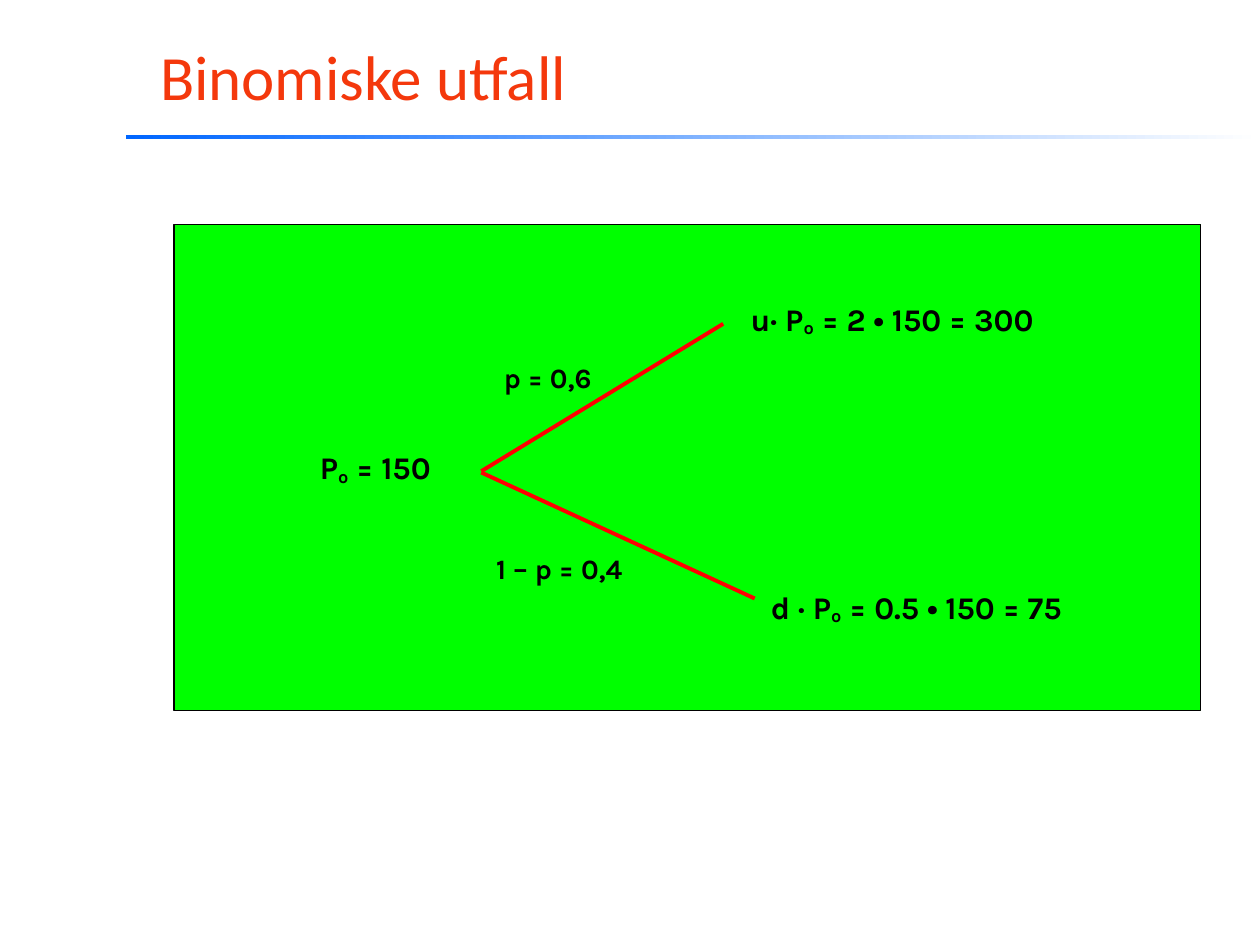
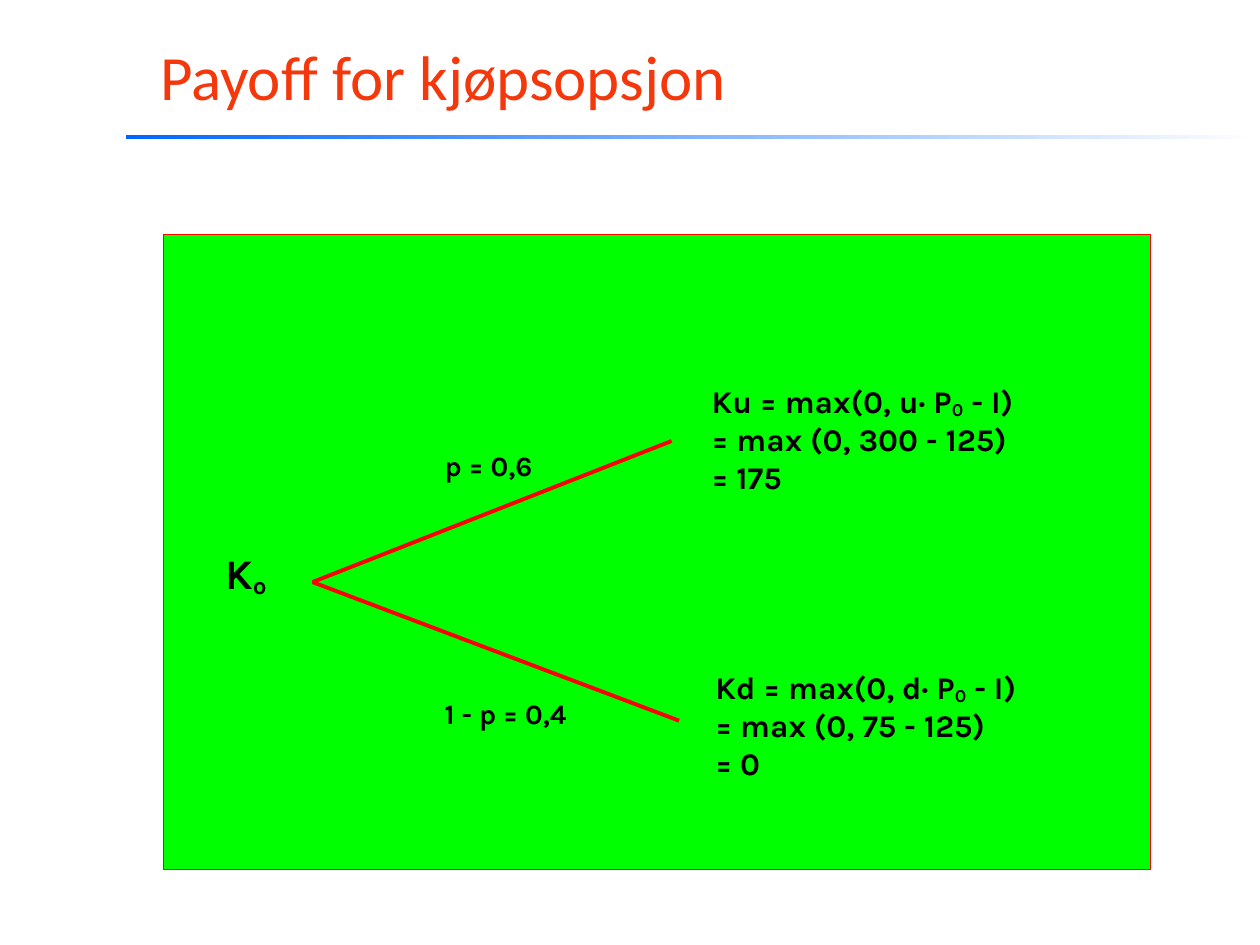
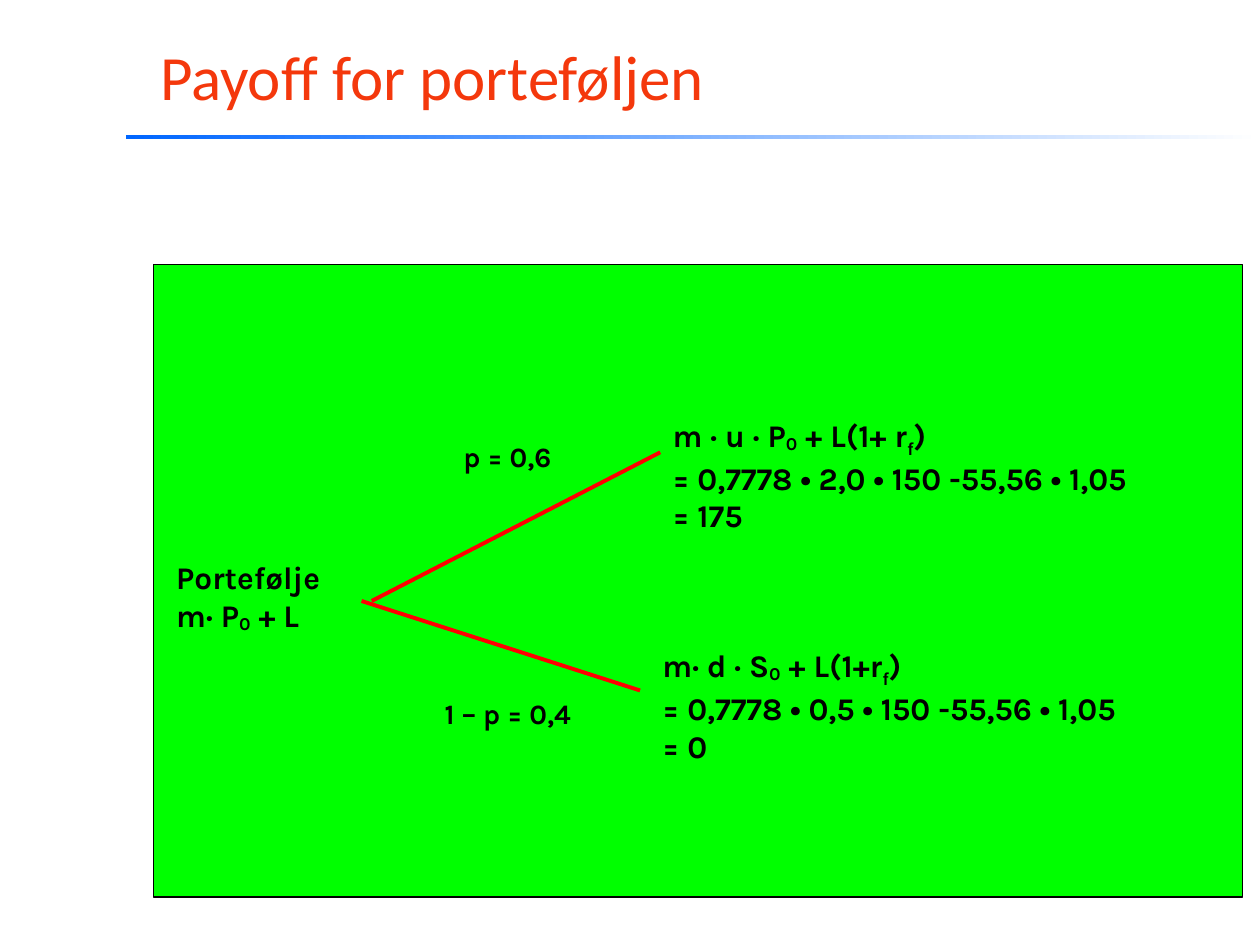
from lxml import etree
from pptx import Presentation
from pptx.dml.color import RGBColor
from pptx.enum.shapes import MSO_CONNECTOR, MSO_SHAPE
from pptx.enum.text import MSO_ANCHOR, MSO_AUTO_SIZE, PP_ALIGN
from pptx.oxml.ns import qn
from pptx.util import Inches, Pt

RECT = MSO_SHAPE.RECTANGLE
LINE = MSO_CONNECTOR.STRAIGHT
LEFT = PP_ALIGN.LEFT
MIDDLE = MSO_ANCHOR.MIDDLE
FIT = MSO_AUTO_SIZE.SHAPE_TO_FIT_TEXT
FIXED = MSO_AUTO_SIZE.NONE

ORANGE = RGBColor(0xF4, 0x38, 0x0C)
BLUE = RGBColor(0x00, 0x66, 0xFF)
WHITE = RGBColor(0xFF, 0xFF, 0xFF)
GREEN = RGBColor(0x00, 0xFF, 0x00)
RED = RGBColor(0xFF, 0x00, 0x00)
BLACK = RGBColor(0x00, 0x00, 0x00)

LOW = -10000
DEEP = -25000
CHANCE = "p = 0,6"


def write(frame, *parts, size=18, font="Karla", color=BLACK, bold=True):
    para = frame.paragraphs[0]
    para.alignment = LEFT
    for part in parts:
        text, base = (part, 0) if isinstance(part, str) else part
        for num, line in enumerate(text.split("\n")):
            if num:
                para.add_line_break()
            run = para.add_run()
            run.text = line
            run.font.size = Pt(size)
            run.font.name = font
            run.font.bold = bold
            run.font.color.rgb = color
            if base:
                run.font._element.set("baseline", str(base))


def add_label(slide, box, spot, width, *parts, size=18):
    text = "".join(part if isinstance(part, str) else part[0] for part in parts)
    high = 0.1 + (text.count("\n") + 1) * size / 60
    label = slide.shapes.add_textbox(
        Inches(box[0] + spot[0]), Inches(box[1] + spot[1]),
        Inches(width), Inches(high))
    frame = label.text_frame
    frame.word_wrap = False
    frame.auto_size = FIT
    write(frame, *parts, size=size)


def add_branch(slide, box, start, end):
    branch = slide.shapes.add_connector(
        LINE, Inches(box[0] + start[0]), Inches(box[1] + start[1]),
        Inches(box[0] + end[0]), Inches(box[1] + end[1]))
    branch.line.color.rgb = RED
    branch.line.width = Pt(2.25)
    etree.SubElement(branch.element.spPr, qn("a:effectLst"))


def add_panel(slide, box, edge):
    panel = slide.shapes.add_shape(RECT, *map(Inches, box))
    panel.shadow.inherit = False
    panel.fill.solid()
    panel.fill.fore_color.rgb = GREEN
    panel.line.color.rgb = edge
    panel.line.width = Pt(0.75)


def add_tree(slide, box, root, labels, lines, odds, edge=BLACK):
    add_panel(slide, box, edge)
    for start, end in lines:
        add_branch(slide, box, start, end)
    for spot, width, *parts in labels:
        add_label(slide, box, spot, width, *parts)
    spot, width, size, *parts = root
    add_label(slide, box, spot, width, *parts, size=size)
    for spot, width, text in odds:
        add_label(slide, box, spot, width, text, size=16)


def style_layout(deck, layout):
    head = layout.placeholders[0]
    head.left, head.top = Inches(1.17), Inches(0.13)
    head.width, head.height = Inches(8.83), Inches(0.94)
    slide = deck.slides[0]
    rule = slide.shapes.add_shape(
        RECT, Inches(1), Inches(1.07), Inches(9), Inches(0.03))
    rule.shadow.inherit = False
    rule.line.fill.background()
    rule.fill.gradient()
    rule.fill.gradient_angle = 0
    for stop, color, place in zip(rule.fill.gradient_stops, (BLUE, WHITE), (0, 1)):
        stop.color.rgb = color
        stop.position = place
    rule.element.nvSpPr.cNvPr.set("id", "20")
    layout.element.cSld.spTree.append(rule.element)


def add_slide(deck, layout, title):
    slide = deck.slides.add_slide(layout)
    frame = slide.shapes.title.text_frame
    frame.vertical_anchor = MIDDLE
    frame.auto_size = FIXED
    write(frame, title, size=36, font="Calibri", color=ORANGE, bold=False)
    return slide


def main():
    deck = Presentation()
    deck.slide_width, deck.slide_height = Inches(10), Inches(7.5)
    layout = deck.slide_layouts[5]

    slide = add_slide(deck, layout, "Binomiske utfall")
    style_layout(deck, layout)
    add_tree(
        slide, (1.38, 1.78, 8.15, 3.86),
        root=((1.06, 1.73), 1.3, 18, "P", ("o", LOW), " = 150"),
        labels=[
            ((4.48, 0.55), 2.92, "u· P", ("o", LOW), " = 2 • 150 = 300"),
            ((4.64, 2.84), 3.07, "d · P", ("o", LOW), " = 0.5 • 150 = 75")],
        lines=[((2.44, 1.96), (4.36, 0.79)), ((2.44, 1.97), (4.61, 2.97))],
        odds=[((2.52, 1.03), 1.01, CHANCE), ((2.46, 2.55), 1.43, "1 – p = 0,4")])

    slide = add_slide(deck, layout, "Payoff for kjøpsopsjon")
    add_tree(
        slide, (1.3, 1.86, 7.83, 5.04), edge=RED,
        root=((0.39, 2.44), 0.67, 24, "K", ("o", LOW)),
        labels=[
            ((4.25, 1.12), 2.93, "Ku = max(0, u· P", ("0", LOW),
             " - I)\n= max (0, 300 - 125)\n= 175"),
            ((4.28, 3.39), 2.93, "Kd = max(0, d· P", ("0", LOW),
             " - I)\n= max (0, 75 - 125)\n= 0")],
        lines=[((1.18, 2.76), (4.03, 1.64)), ((1.18, 2.76), (4.09, 3.86))],
        odds=[((2.13, 1.65), 1.01, CHANCE), ((2.13, 3.62), 1.38, "1 - p = 0,4")])

    slide = add_slide(deck, layout, "Payoff for porteføljen")
    add_tree(
        slide, (1.22, 2.1, 8.64, 5.02),
        root=((0.08, 2.28), 1.45, 18, "Portefølje\nm· P", ("0", LOW), " + L"),
        labels=[
            ((4.02, 1.15), 4.6, "m · u · P", ("0", LOW), " + L(1+ r", ("f", DEEP),
             ")\n= 0,7778 • 2,0 • 150 -55,56 • 1,05\n= 175"),
            ((3.94, 2.98), 4.6, "m· d · S", ("0", LOW), " + L(1+r", ("f", DEEP),
             ")\n= 0,7778 • 0,5 • 150 -55,56 • 1,05\n= 0")],
        lines=[((1.73, 2.67), (4.02, 1.49)), ((1.65, 2.67), (3.86, 3.38))],
        odds=[((2.36, 1.34), 1.01, CHANCE), ((2.21, 3.38), 1.43, "1 – p = 0,4")])

    deck.save("out.pptx")


if __name__ == "__main__":
    main()
